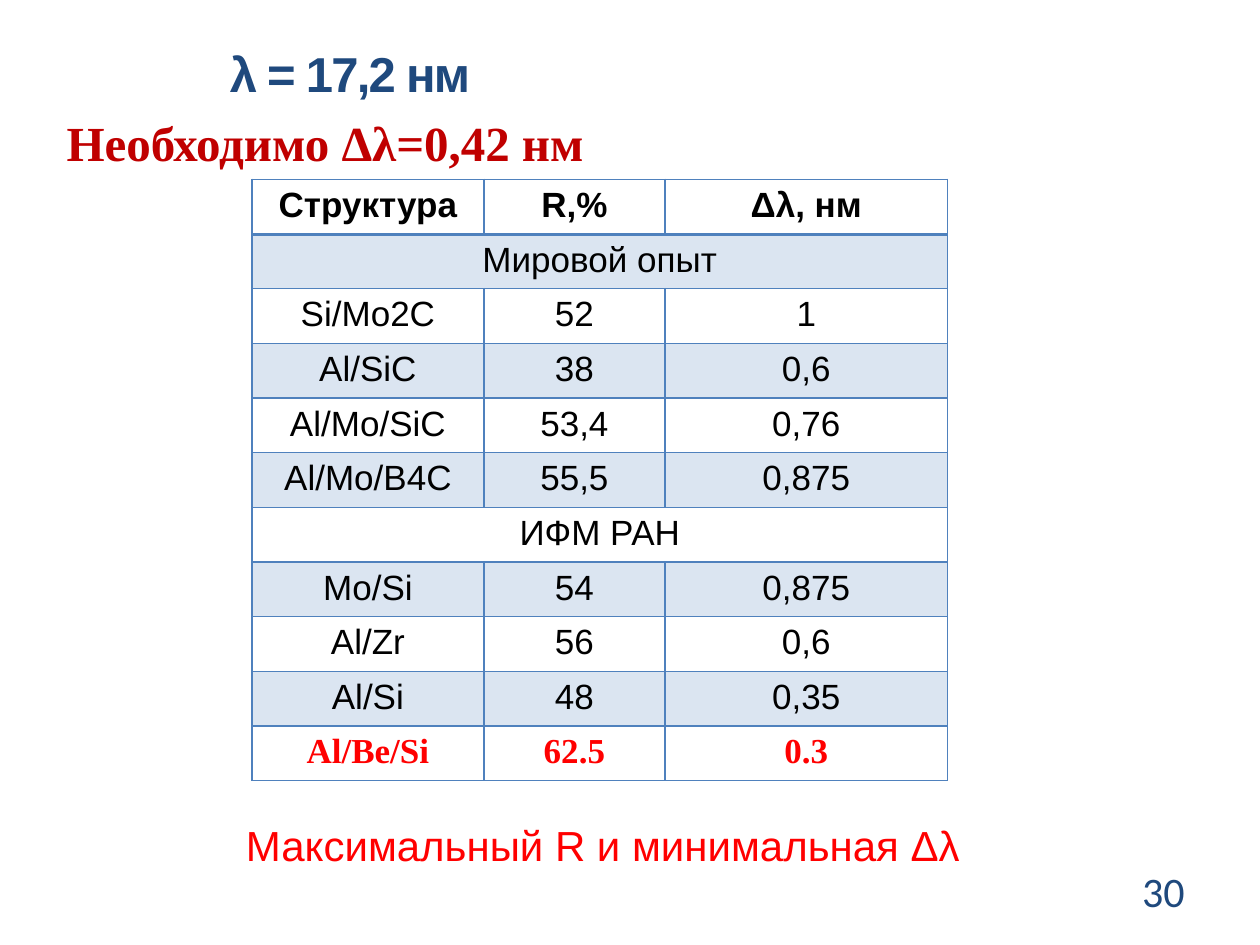
from lxml.etree import SubElement
from pptx import Presentation
from pptx.dml.color import RGBColor as RGB
from pptx.enum.text import MSO_ANCHOR as ANCHOR, PP_ALIGN as ALIGN
from pptx.oxml import parse_xml
from pptx.oxml.ns import nsdecls, qn
from pptx.util import Pt

COLORS = {"navy": "1F497D", "dark_red": "C00000", "red": "FF0000",
          "black": "000000", "blue": "4F81BD"}


def write(tf, text, size, color, font="Arial", bold=False, align=ALIGN.LEFT,
          anchor=ANCHOR.TOP, wrap=True):
    tf.word_wrap = wrap
    tf.vertical_anchor = anchor
    p = tf.paragraphs[0]
    p.alignment = align
    r = p.add_run()
    r.text = text
    r.font.name, r.font.size, r.font.bold = font, Pt(size), bold
    r.font.color.rgb = RGB.from_string(COLORS[color])
    return r


def set_borders(cell, top, bottom):
    """Draw all four cell borders; top and bottom are widths in points."""
    widths = {"L": 1, "R": 1, "T": top, "B": bottom}
    for i, (side, width) in enumerate(widths.items()):
        cell._tc.get_or_add_tcPr().insert(i, parse_xml(
            f'<a:ln{side} {nsdecls("a")} w="{Pt(width)}"><a:solidFill>'
            f'<a:srgbClr val="{COLORS["blue"]}"/></a:solidFill></a:ln{side}>'))


prs = Presentation()
prs.slide_width, prs.slide_height = Pt(720), Pt(540)
s = prs.slides.add_slide(prs.slide_layouts[5])

# Title and requirement
title = s.shapes.title
title.left, title.top, title.width, title.height = Pt(0), Pt(21), Pt(400), Pt(41)
r = write(title.text_frame, "λ = 17,2 нм", 28, "navy", bold=True,
          align=ALIGN.CENTER, anchor=ANCHOR.MIDDLE)
r.font._element.set("spc", "-100")

need = s.shapes.add_textbox(Pt(31), Pt(60.5), Pt(312), Pt(41))
write(need.text_frame, "Необходимо Δλ=0,42 нм", 28, "dark_red",
      font="Times New Roman", bold=True, wrap=False)

# Table of mirror structures; a one-item row is a section heading
rows = [
    ("Структура", "R,%", "Δλ, нм"),
    ("Мировой опыт",),
    ("Si/Mo2C", "52", "1"),
    ("Al/SiC", "38", "0,6"),
    ("Al/Mo/SiC", "53,4", "0,76"),
    ("Al/Mo/B4C", "55,5", "0,875"),
    ("ИФМ РАН",),
    ("Mo/Si", "54", "0,875"),
    ("Al/Zr", "56", "0,6"),
    ("Al/Si", "48", "0,35"),
    ("Al/Be/Si", "62.5", "0.3"),
]
col_widths = [132.5, 103.5, 161.5]
row_height = 31.2
last = len(rows) - 1

table = s.shapes.add_table(len(rows), len(col_widths), Pt(144), Pt(102.5),
                           Pt(sum(col_widths)), Pt(row_height * len(rows))).table
table.first_row = table.horz_banding = False
for col, width in zip(table.columns, col_widths):
    col.width = Pt(width)

for i, values in enumerate(rows):
    table.rows[i].height = Pt(row_height)
    if len(values) == 1:
        table.cell(i, 0).merge(table.cell(i, len(col_widths) - 1))
    for cell in table.rows[i].cells:
        if i % 2:
            cell.fill.solid()
            cell.fill.fore_color.rgb = RGB.from_string(COLORS["blue"])
            rgb = cell._tc.tcPr.find(".//" + qn("a:srgbClr"))
            SubElement(rgb, qn("a:alpha")).set("val", "20000")
        else:
            cell.fill.background()
        set_borders(cell, top=2 if i == 1 else 1, bottom=2 if i == 0 else 1)
    for j, value in enumerate(values):
        write(table.cell(i, j).text_frame, value, 20,
              "red" if i == last else "black",
              font="Times New Roman" if i == last else "Arial",
              bold=i in (0, last), align=ALIGN.CENTER)

# Conclusion and page number
conclusion = s.shapes.add_textbox(Pt(133.5), Pt(465), Pt(432), Pt(36))
write(conclusion.text_frame, "Максимальный R и минимальная Δλ", 24, "red", wrap=False)

number = s.shapes.add_textbox(Pt(516), Pt(494.5), Pt(168), Pt(29))
write(number.text_frame, "30", 24, "navy", font="Calibri", align=ALIGN.RIGHT,
      anchor=ANCHOR.MIDDLE)

prs.save("out.pptx")
